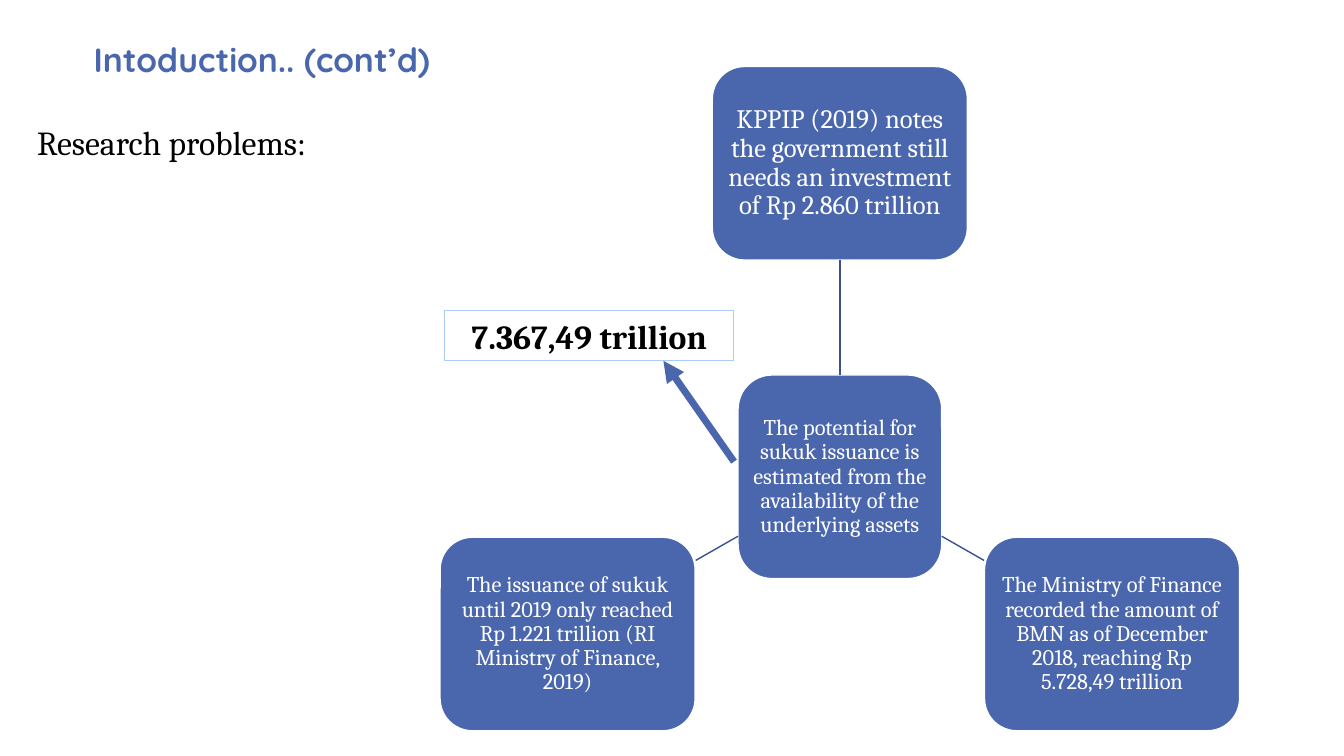
from dataclasses import dataclass

import pptx
import pptx.dml.color
import pptx.enum.dml
import pptx.enum.shapes
import pptx.enum.text
import pptx.oxml
import pptx.oxml.ns
import pptx.util

Inches = pptx.util.Inches
Pt = pptx.util.Pt
Shape = pptx.enum.shapes.MSO_SHAPE
Anchor = pptx.enum.text.MSO_ANCHOR
Align = pptx.enum.text.PP_ALIGN

BLUE, DARK_BLUE, PALE_BLUE = "4A66AC", "3B528A", "ACCBF9"
WHITE, BLACK = "FFFFFF", "000000"
BODY_FONT, TITLE_FONT = "Cambria", "Quicksand"

HUB_X, HUB_Y, HUB_SIZE = 8.33, 4.73, 2.02
NODE_W, NODE_H = 2.53, 1.92
SIDE_DX, SIDE_DY, TOP_DY = 2.7, 1.56, -3.11


@dataclass
class Node:
    cx: float
    cy: float
    w: float
    h: float
    size: float
    inset: float
    text: str


@dataclass
class Heading:
    left: float
    top: float
    width: float
    font: str
    color: str
    bold: bool
    text: str


HUB = Node(HUB_X, HUB_Y, HUB_SIZE, HUB_SIZE, 16, 0.04,
           "The potential for sukuk issuance is estimated from the "
           "availability of the underlying assets")
NEED = Node(HUB_X, HUB_Y + TOP_DY, NODE_W, NODE_H, 19, 0.05,
            "KPPIP (2019) notes the government still needs an investment "
            "of Rp 2.860 trillion")
ASSETS = Node(HUB_X + SIDE_DX, HUB_Y + SIDE_DY, NODE_W, NODE_H, 16, 0.04,
              "The Ministry of Finance recorded the amount of BMN as of "
              "December 2018, reaching Rp 5.728,49 trillion")
ISSUED = Node(HUB_X - SIDE_DX, HUB_Y + SIDE_DY, NODE_W, NODE_H, 16, 0.04,
              "The issuance of sukuk until 2019 only reached Rp 1.221 "
              "trillion (RI Ministry of Finance, 2019)")

HEADINGS = [
    Heading(0.83, 0.25, 9.5, TITLE_FONT, BLUE, True, "Intoduction.. (cont’d)"),
    Heading(0.27, 1.08, 5.58, BODY_FONT, BLACK, False, "Research problems:"),
]


def rgb(color: str) -> pptx.dml.color.RGBColor:
    return pptx.dml.color.RGBColor.from_string(color)


def write(sp, text: str, size: float, font: str, color: str, align, anchor,
          spacing: float = 1.0, bold: bool = False) -> None:
    tf = sp.text_frame
    tf.word_wrap = True
    tf.vertical_anchor = anchor
    p = tf.paragraphs[0]
    p.text = text
    p.alignment = align
    p.line_spacing = spacing
    r = p.runs[0]
    r.font.size = Pt(size)
    r.font.name = font
    r.font.bold = bold
    r.font.color.rgb = rgb(color)


def add_node(slide, node: Node):
    sp = slide.shapes.add_shape(
        Shape.ROUNDED_RECTANGLE,
        Inches(node.cx - node.w / 2), Inches(node.cy - node.h / 2),
        Inches(node.w), Inches(node.h))
    sp.shadow.inherit = False
    sp.fill.solid()
    sp.fill.fore_color.rgb = rgb(BLUE)
    sp.line.color.rgb = rgb(WHITE)
    sp.line.width = Pt(1)
    tf = sp.text_frame
    tf.margin_left = tf.margin_right = Inches(node.inset)
    tf.margin_top = tf.margin_bottom = Inches(node.inset)
    write(sp, node.text, node.size, BODY_FONT, WHITE, Align.CENTER,
          Anchor.MIDDLE, 0.9)
    return sp


def add_line(slide, x1: float, y1: float, x2: float, y2: float,
             color: str, width: float):
    line = slide.shapes.add_connector(
        pptx.enum.shapes.MSO_CONNECTOR.STRAIGHT,
        Inches(x1), Inches(y1), Inches(x2), Inches(y2))
    line.line.color.rgb = rgb(color)
    line.line.width = Pt(width)
    sp_pr = line._element.spPr
    sp_pr.append(pptx.oxml.parse_xml(
        f"<a:effectLst {pptx.oxml.ns.nsdecls('a')}/>"))
    return line


def add_total(slide) -> None:
    """Draw the framed total and the arrow that points to it."""
    sp = slide.shapes.add_shape(Shape.RECTANGLE, Inches(4.41), Inches(3.08),
                                Inches(2.87), Inches(0.5))
    sp.shadow.inherit = False
    sp.fill.background()
    sp.line.color.rgb = rgb(PALE_BLUE)
    sp.line.width = Pt(0.75)
    write(sp, "7.367,49 trillion", 24, BODY_FONT, BLACK, Align.CENTER,
          Anchor.MIDDLE, bold=True)
    arrow = add_line(slide, 7.28, 4.58, 6.58, 3.58, BLUE, 5)
    arrow.line._get_or_add_ln().append(pptx.oxml.parse_xml(
        f"<a:tailEnd {pptx.oxml.ns.nsdecls('a')} type='triangle'/>"))


def add_heading(slide, heading: Heading) -> None:
    sp = slide.shapes.add_textbox(Inches(heading.left), Inches(heading.top),
                                  Inches(heading.width), Inches(0.58))
    write(sp, heading.text, 24, heading.font, heading.color, Align.LEFT,
          Anchor.BOTTOM, 0.8, heading.bold)


def main() -> None:
    prs = pptx.Presentation()
    prs.slide_width, prs.slide_height = Inches(13.33), Inches(7.5)
    slide = prs.slides.add_slide(prs.slide_layouts[6])

    hub = add_node(slide, HUB)
    need = add_node(slide, NEED)
    stem = add_line(slide, HUB_X, 3.72, HUB_X, 2.58, DARK_BLUE, 1)
    stem.begin_connect(hub, 0)
    stem.end_connect(need, 2)
    for node, side in ((ASSETS, 1), (ISSUED, -1)):
        add_node(slide, node)
        add_line(slide, HUB_X + side * 1.01, 5.32,
                 HUB_X + side * 1.43, 5.56, DARK_BLUE, 1)

    add_total(slide)
    for heading in HEADINGS:
        add_heading(slide, heading)
    prs.save("out.pptx")


if __name__ == "__main__":
    main()
